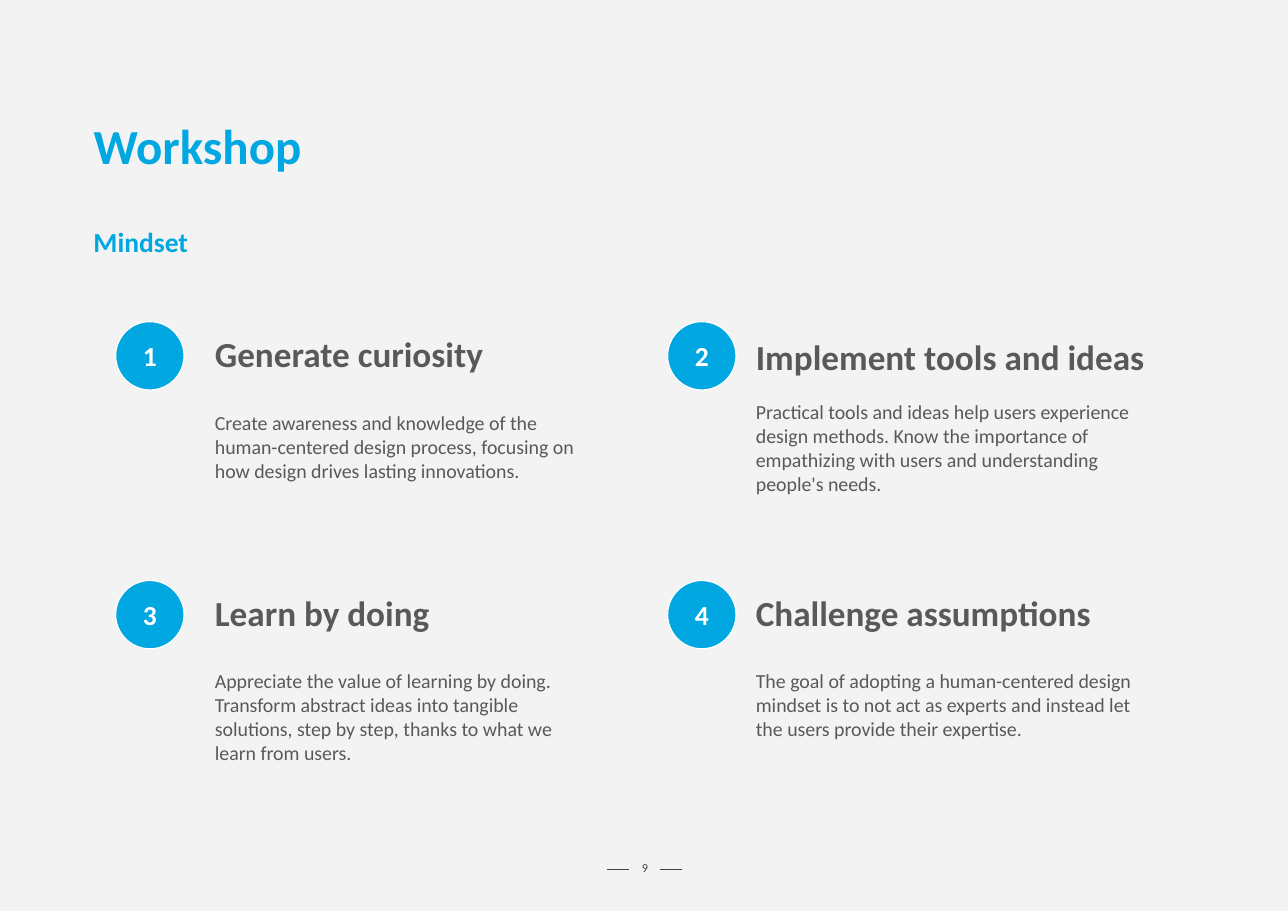
from dataclasses import dataclass

from lxml import etree
from pptx import Presentation
from pptx.dml.color import RGBColor
from pptx.enum.shapes import MSO_CONNECTOR, MSO_SHAPE
from pptx.enum.text import MSO_ANCHOR, PP_ALIGN
from pptx.oxml.ns import qn
from pptx.util import Inches, Pt

OVAL = MSO_SHAPE.OVAL
STRAIGHT = MSO_CONNECTOR.STRAIGHT
TOP, MIDDLE = MSO_ANCHOR.TOP, MSO_ANCHOR.MIDDLE
LEFT, CENTER = PP_ALIGN.LEFT, PP_ALIGN.CENTER

FONT = "Calibri"
BLUE, GRAY, DARK, WHITE, PAPER = "00A7E1", "595959", "434343", "FFFFFF", "F3F3F3"

CIRCLE = 0.62
CIRCLE_X = (1.05, 6.06)
TEXT_X = (1.86, 6.77)
ROW_Y = (2.92, 5.27)


@dataclass
class Mindset:
    heading: str
    body: str
    body_height: float
    heading_dy: float = 0.05
    heading_spacing: float = 0.9
    body_dy: float = 0.71


MINDSETS = [
    Mindset("Generate curiosity",
            "Create awareness and knowledge of the human-centered design process, "
            "focusing on how design drives lasting innovations.", 0.83, body_dy=0.72),
    Mindset("Implement tools and ideas",
            "Practical tools and ideas help users experience design methods. Know the "
            "importance of empathizing with users and understanding people's needs.",
            1.05, heading_dy=0.03, heading_spacing=1.0, body_dy=0.62),
    Mindset("Learn by doing",
            "Appreciate the value of learning by doing. Transform abstract ideas into "
            "tangible solutions, step by step, thanks to what we learn from users.", 1.05),
    Mindset("Challenge assumptions",
            "The goal of adopting a human-centered design mindset is to not act as experts "
            "and instead let the users provide their expertise.", 0.83),
]


def rgb(color: str) -> RGBColor:
    return RGBColor.from_string(color)


def write(sp, text: str, *, size: float, color: str, bold: bool = False,
          align=LEFT, anchor=TOP, spacing: float = 1.0,
          inset_x: float = 0.09, inset_y: float = 0.09) -> None:
    tf = sp.text_frame
    tf.word_wrap = True
    tf.vertical_anchor = anchor
    tf.margin_left = tf.margin_right = Inches(inset_x)
    tf.margin_top = tf.margin_bottom = Inches(inset_y)
    p = tf.paragraphs[0]
    p.alignment = align
    p.line_spacing = spacing
    r = p.add_run()
    r.text = text
    r.font.name = FONT
    r.font.size = Pt(size)
    r.font.bold = bold
    r.font.color.rgb = rgb(color)


def add_text(s, x: float, y: float, w: float, h: float, text: str, **fmt) -> None:
    write(s.shapes.add_textbox(Inches(x), Inches(y), Inches(w), Inches(h)), text, **fmt)


def add_circle(s, x: float, y: float, label: str) -> None:
    sp = s.shapes.add_shape(OVAL, Inches(x), Inches(y), Inches(CIRCLE), Inches(CIRCLE))
    sp.shadow.inherit = False
    sp.fill.solid()
    sp.fill.fore_color.rgb = rgb(BLUE)
    sp.line.color.rgb = rgb(WHITE)
    sp.line.width = Pt(0.75)
    write(sp, label, size=18, color=WHITE, bold=True, align=CENTER, anchor=MIDDLE)


def add_dash(s, x: float, y: float, length: float) -> None:
    line = s.shapes.add_connector(STRAIGHT, Inches(x), Inches(y), Inches(x + length), Inches(y))
    line.line.color.rgb = rgb(DARK)
    line.line.width = Pt(0.75)
    etree.SubElement(line._element.spPr, qn("a:effectLst"))


def add_mindset(s, index: int, item: Mindset) -> None:
    row, col = divmod(index, 2)
    x, y = TEXT_X[col], ROW_Y[row]
    add_circle(s, CIRCLE_X[col], y, str(index + 1))
    add_text(s, x, y + item.heading_dy, 3.92, 0.52, item.heading,
             size=23, color=GRAY, bold=True, spacing=item.heading_spacing)
    add_text(s, x, y + item.body_dy, 3.59, item.body_height, item.body, size=13, color=GRAY)


def main() -> None:
    prs = Presentation()
    prs.slide_width, prs.slide_height = Inches(11.69), Inches(8.27)
    s = prs.slides.add_slide(prs.slide_layouts[6])
    s.background.fill.solid()
    s.background.fill.fore_color.rgb = rgb(PAPER)

    # Title and subtitle
    add_text(s, 0.74, 0.83, 10.21, 1.06, "Workshop", size=32, color=BLUE, bold=True,
             anchor=MIDDLE, spacing=0.86, inset_x=0.11, inset_y=0.06)
    add_text(s, 0.75, 1.94, 5.38, 0.52, "Mindset", size=18, color=BLUE, bold=True,
             inset_x=0.1, inset_y=0.1)

    # Numbered mindsets in a two by two grid
    for index, item in enumerate(MINDSETS):
        add_mindset(s, index, item)

    # Page number between two dashes
    add_text(s, 5.68, 7.76, 0.35, 0.26, "9", size=8, color=DARK, align=CENTER,
             anchor=MIDDLE, spacing=0.8, inset_x=0.1, inset_y=0.1)
    for x in (5.51, 5.99):
        add_dash(s, x, 7.89, 0.2)

    prs.save("out.pptx")


if __name__ == "__main__":
    main()
